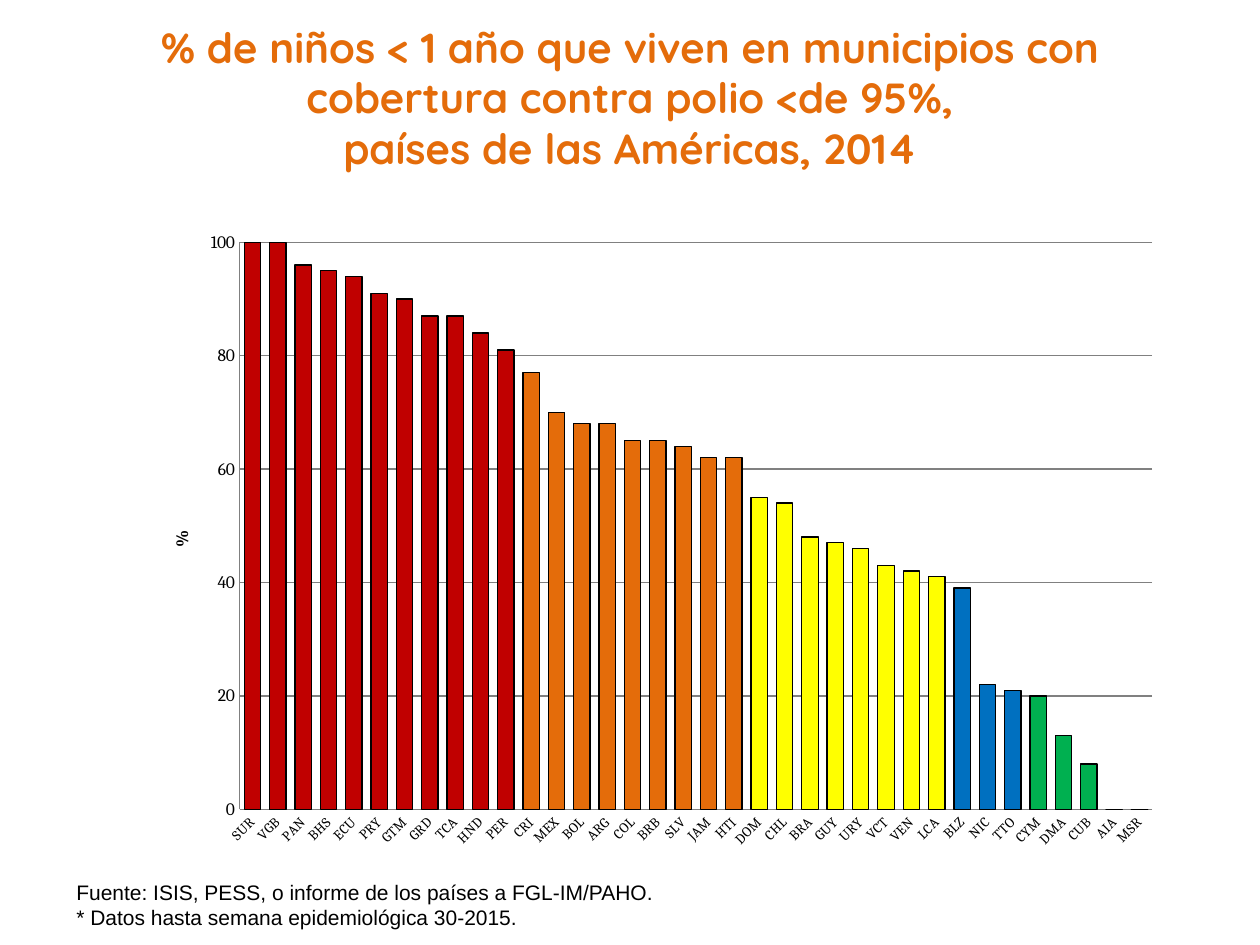
from lxml.etree import SubElement
from pptx import Presentation
from pptx.chart.data import CategoryChartData as Data
from pptx.dml.color import RGBColor as Rgb
from pptx.enum.chart import XL_CHART_TYPE as Kind, XL_TICK_MARK as Tick
from pptx.enum.text import MSO_ANCHOR as Anchor, PP_ALIGN as Align
from pptx.oxml.ns import qn
from pptx.util import Pt

SCALE = 914400 / 126  # EMU per px
HEX = {"red": "C00000", "orange": "E46C0A", "yellow": "FFFF00", "blue": "0070C0",
       "green": "00B050", "base": "4F81BD", "grid": "808080", "black": "000000"}

TITLE = ("% de niños < 1 año que viven en municipios con\v"
         "cobertura contra polio <de 95%,\vpaíses de las Américas, 2014")
NOTES = ("Fuente: ISIS, PESS, o informe de los países a FGL-IM/PAHO.\n"
         "* Datos hasta semana epidemiológica 30-2015.")

# Coverage by country, grouped by bar colour
BANDS = [
    ("red", {"SUR": 100, "VGB": 100, "PAN": 96, "BHS": 95, "ECU": 94, "PRY": 91,
             "GTM": 90, "GRD": 87, "TCA": 87, "HND": 84, "PER": 81}),
    ("orange", {"CRI": 77, "MEX": 70, "BOL": 68, "ARG": 68, "COL": 65, "BRB": 65,
                "SLV": 64, "JAM": 62, "HTI": 62}),
    ("yellow", {"DOM": 55, "CHL": 54, "BRA": 48, "GUY": 47, "URY": 46, "VCT": 43,
                "VEN": 42, "LCA": 41}),
    ("blue", {"BLZ": 39, "NIC": 22, "TTO": 21}),
    ("green", {"CYM": 20, "DMA": 13, "CUB": 8}),
    ("base", {"AIA": 0, "MSR": 0}),
]


def px(n):
    return round(n * SCALE)


def color(name):
    return Rgb.from_string(HEX[name])


def style(font, size, face, tint="black", bold=False):
    font.size, font.name, font.bold = Pt(size), face, bold
    font.color.rgb = color(tint)


def write(frame, text, align=Align.LEFT, **fmt):
    frame.text = text
    for par in frame.paragraphs:
        par.alignment = align
        for run in par.runs:
            style(run.font, **fmt)


def stroke(line, tint, width=0.75):
    line.color.rgb = color(tint)
    line.width = Pt(width)


def place(node, pos, inner=False, **parts):
    """Set a manual layout as fractions of the chart."""
    old = node.find(qn("c:layout"))
    if old is not None:
        node.remove(old)
    lay = SubElement(node, qn("c:layout"))
    node.insert(pos, lay)
    man = SubElement(lay, qn("c:manualLayout"))
    if inner:
        SubElement(man, qn("c:layoutTarget")).set("val", "inner")
    for side in "xy":
        SubElement(man, qn(f"c:{side}Mode")).set("val", "edge")
    for key, val in parts.items():
        SubElement(man, qn(f"c:{key}")).set("val", str(val))


def add_title(slide):
    head = slide.shapes.title
    head.left, head.top, head.width, head.height = map(px, (21, 21, 1218, 158))
    frame = head.text_frame
    frame.vertical_anchor = Anchor.BOTTOM
    write(frame, TITLE, Align.CENTER, size=24, face="Quicksand",
          tint="orange", bold=True)


def add_notes(slide):
    box = slide.shapes.add_textbox(*map(px, (64, 873, 620, 63)))
    box.text_frame.word_wrap = False
    write(box.text_frame, NOTES, size=12, face="Arial")


def add_bars(slide):
    data = Data()
    data.categories = [name for _, band in BANDS for name in band]
    data.add_series("Series 1", [val for _, band in BANDS for val in band.values()])
    chart = slide.shapes.add_chart(
        Kind.COLUMN_STACKED, *map(px, (136, 220, 1037, 640)), data).chart
    chart.has_legend = chart.has_title = False
    style(chart.font, 10, "Cambria")
    place(chart.plots[0]._element.getparent(), 0, True, x=0.1, y=0.035, w=0.88, h=0.886)

    # Bars, coloured by band
    plot = chart.plots[0]
    plot.gap_width, plot.overlap, plot.vary_by_categories = 55, 100, False
    bars = plot.series[0]
    bars.format.fill.solid()
    bars.format.fill.fore_color.rgb = color("base")
    stroke(bars.format.line, "black")
    tints = [tint for tint, band in BANDS for _ in band]
    for i, tint in enumerate(tints):
        if tint != "base":
            look = bars.points[i].format
            look.fill.solid()
            look.fill.fore_color.rgb = color(tint)
            stroke(look.line, "black")

    # Axes
    cat, val = chart.category_axis, chart.value_axis
    for axis in (cat, val):
        axis.major_tick_mark = axis.minor_tick_mark = Tick.NONE
        stroke(axis.format.line, "grid")
    style(cat.tick_labels.font, 8, "Cambria")
    cat._element.find(qn("c:txPr")).find(qn("a:bodyPr")).set("rot", "-2700000")
    style(val.tick_labels.font, 10, "Cambria")
    val.minimum_scale, val.maximum_scale, val.major_unit = 0, 100, 20
    val.has_major_gridlines = True
    stroke(val.major_gridlines.format.line, "grid")

    # Value axis title
    name = val.axis_title
    write(name.text_frame, "%", Align.CENTER, size=10, face="Cambria", bold=True)
    name.text_frame._txBody.find(qn("a:bodyPr")).set("rot", "-5400000")
    place(name._element, 1, x=0.03, y=0.48)


def main():
    deck = Presentation()
    deck.slide_width, deck.slide_height = px(1260), px(945)
    slide = deck.slides.add_slide(deck.slide_layouts[5])
    add_title(slide)
    add_bars(slide)
    add_notes(slide)
    deck.save("out.pptx")


if __name__ == "__main__":
    main()
